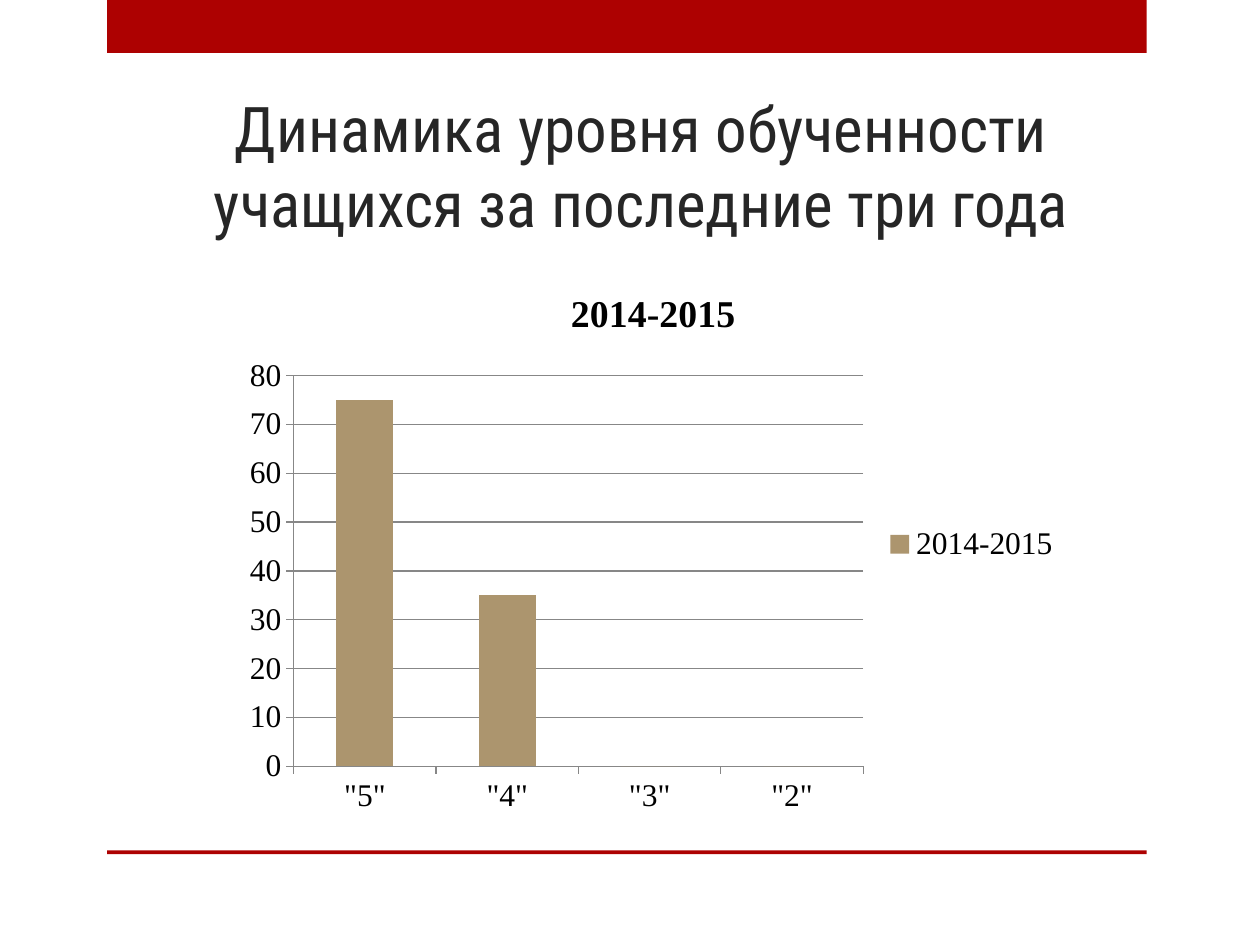
import pptx
import pptx.util
import pptx.chart.data
import pptx.dml.color
import pptx.enum.chart
import pptx.enum.shapes
import pptx.enum.text

Inches, Pt = pptx.util.Inches, pptx.util.Pt
COLORS = {
    name: pptx.dml.color.RGBColor.from_string(value)
    for name, value in {
        "band": "AD0101", "title": "262626", "text": "000000",
        "bar": "AC956E", "grid": "878787",
    }.items()
}

prs = pptx.Presentation()
prs.slide_width, prs.slide_height = Inches(10), Inches(7.5)
W, H = prs.slide_width, prs.slide_height
s = prs.slides.add_slide(prs.slide_layouts[5])

# Red bands at the top and the bottom
for top, height in ((0, 0.42), (0.9 * H / Inches(1), 0.03)):
    sp = s.shapes.add_shape(
        pptx.enum.shapes.MSO_SHAPE.RECTANGLE,
        int(0.085 * W), Inches(top), int(0.825 * W), Inches(height))
    sp.shadow.inherit = False
    sp.fill.solid()
    sp.fill.fore_color.rgb = COLORS["band"]
    sp.line.fill.background()

# Title
title = s.shapes.title
title.left, title.top = Inches(1.38), Inches(0.21)
title.width, title.height = Inches(7.42), Inches(1.75)
tf = title.text_frame
tf.word_wrap = True
tf.auto_size = pptx.enum.text.MSO_AUTO_SIZE.NONE
tf.vertical_anchor = pptx.enum.text.MSO_ANCHOR.BOTTOM
p = tf.paragraphs[0]
p.alignment = pptx.enum.text.PP_ALIGN.CENTER
r = p.add_run()
r.text = "Динамика уровня обученности учащихся за последние три года"
r.font.name, r.font.size = "Roboto Condensed", Pt(36)
r.font.color.rgb = COLORS["title"]

# Chart of marks
data = pptx.chart.data.CategoryChartData()
data.categories = ['"5"', '"4"', '"3"', '"2"']
data.add_series("2014-2015", (75, 35, 0, 0))
chart = s.shapes.add_chart(
    pptx.enum.chart.XL_CHART_TYPE.COLUMN_CLUSTERED,
    Inches(1.85), Inches(2.1), Inches(6.67), Inches(4.44), data).chart
chart.font.name, chart.font.size = "Times New Roman", Pt(18)
chart.font.color.rgb = COLORS["text"]

chart.has_title = True
r = chart.chart_title.text_frame.paragraphs[0].add_run()
r.text = "2014-2015"
r.font.name, r.font.size, r.font.bold = "Times New Roman", Pt(21.6), True
r.font.color.rgb = COLORS["text"]

chart.has_legend = True
chart.legend.position = pptx.enum.chart.XL_LEGEND_POSITION.RIGHT
chart.legend.include_in_layout = False

plot = chart.plots[0]
plot.gap_width = 150
plot.vary_by_categories = False
fill = plot.series[0].format.fill
fill.solid()
fill.fore_color.rgb = COLORS["bar"]

value_axis = chart.value_axis
value_axis.minimum_scale, value_axis.maximum_scale = 0, 80
value_axis.major_unit = 10
value_axis.has_major_gridlines = True
for axis in (chart.category_axis, value_axis):
    axis.major_tick_mark = pptx.enum.chart.XL_TICK_MARK.OUTSIDE
for part in (chart.category_axis, value_axis, value_axis.major_gridlines):
    part.format.line.color.rgb = COLORS["grid"]
    part.format.line.width = Pt(0.75)

prs.save("out.pptx")
